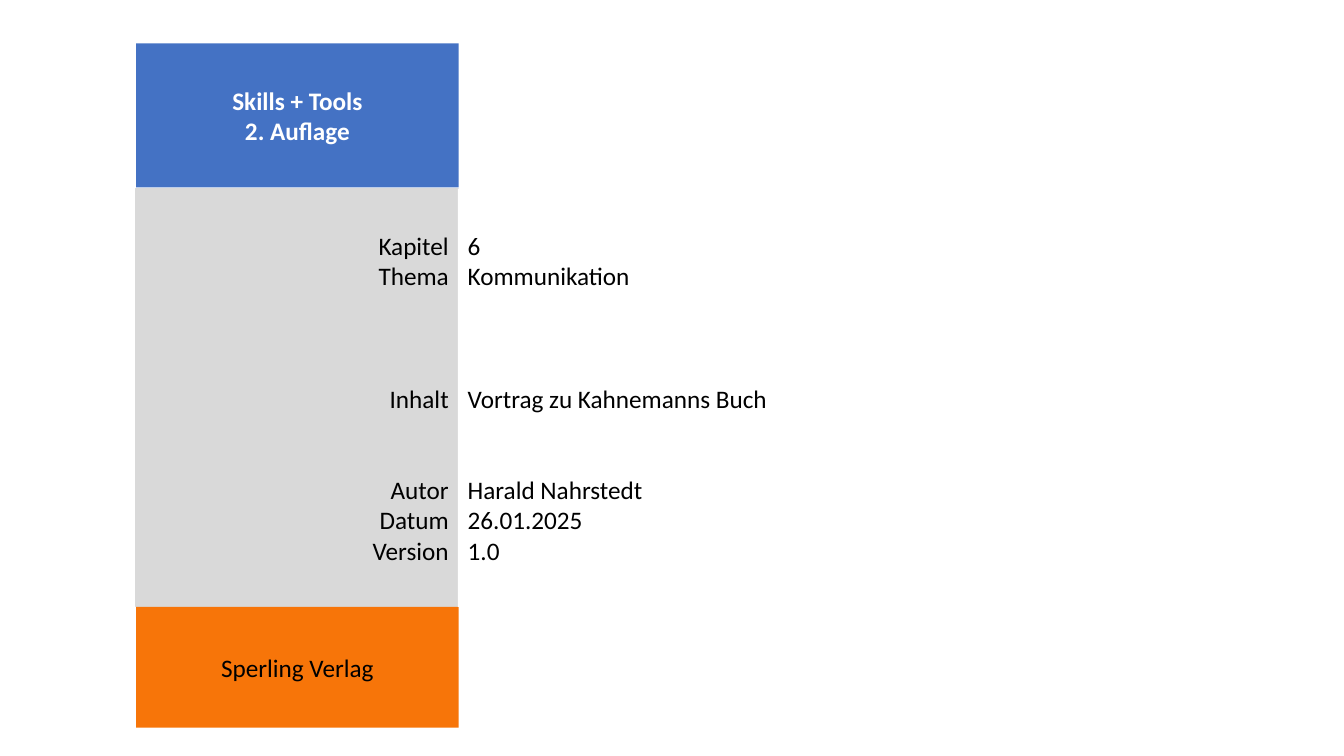
from pptx import Presentation
from pptx.dml.color import RGBColor
from pptx.enum.shapes import MSO_SHAPE
from pptx.enum.text import MSO_ANCHOR, PP_ALIGN
from pptx.util import Inches, Pt

BLUE = RGBColor(0x44, 0x72, 0xC4)
GREY = RGBColor(0xD9, 0xD9, 0xD9)
ORANGE = RGBColor(0xF7, 0x75, 0x09)
WHITE = RGBColor(0xFF, 0xFF, 0xFF)
BLACK = RGBColor(0x00, 0x00, 0x00)

LEFT, COLUMN_WIDTH = 1.35, 3.2
DETAILS_TOP, DETAILS_HEIGHT = 1.87, 4.15
LINE_HEIGHT = 21.97  # points, one line of 18 pt text

# Label, value and the number of lines left free above
DETAILS = [
    ("Kapitel", "6", 0),
    ("Thema", "Kommunikation", 0),
    ("Inhalt", "Vortrag zu Kahnemanns Buch", 3),
    ("Autor", "Harald Nahrstedt", 2),
    ("Datum", "26.01.2025", 0),
    ("Version", "1.0", 0),
]


class CoverSlide:
    """Holds the text style and the current slide."""

    font_name = "Calibri"
    font_size = Pt(18)

    def __init__(self, deck):
        self.page = deck.slides.add_slide(deck.slide_layouts[6])

    def block(self, left, top, width, height, fill, lines, align,
              color=BLACK, bold=False, outline=None):
        """Add a filled rectangle; lines are (text, free lines above)."""
        box = self.page.shapes.add_shape(
            MSO_SHAPE.RECTANGLE,
            Inches(left), Inches(top), Inches(width), Inches(height))
        box.shadow.inherit = False
        box.fill.solid()
        box.fill.fore_color.rgb = fill
        if outline is None:
            box.line.fill.background()
        else:
            box.line.color.rgb = outline
            box.line.width = Pt(1)

        frame = box.text_frame
        frame.word_wrap = True
        frame.vertical_anchor = MSO_ANCHOR.MIDDLE
        for index, (text, free_lines) in enumerate(lines):
            para = frame.add_paragraph() if index else frame.paragraphs[0]
            para.text = text
            para.alignment = align
            para.space_before = Pt(free_lines * LINE_HEIGHT)
            para.font.name = self.font_name
            para.font.size = self.font_size
            para.font.bold = bold
            para.font.color.rgb = color


def main():
    deck = Presentation()
    deck.slide_width, deck.slide_height = Inches(13.33), Inches(7.5)
    cover = CoverSlide(deck)

    # Title
    cover.block(LEFT, 0.43, COLUMN_WIDTH, 1.43, BLUE,
                [("Skills + Tools", 0), ("2. Auflage", 0)],
                PP_ALIGN.CENTER, color=WHITE, bold=True)

    # Labels
    cover.block(LEFT, DETAILS_TOP, COLUMN_WIDTH, DETAILS_HEIGHT, GREY,
                [(label, free) for label, _, free in DETAILS],
                PP_ALIGN.RIGHT, outline=GREY)

    # Publisher
    cover.block(LEFT, DETAILS_TOP + DETAILS_HEIGHT, COLUMN_WIDTH, 1.2, ORANGE,
                [("Sperling Verlag", 0)], PP_ALIGN.CENTER)

    # Values
    cover.block(4.54, DETAILS_TOP, 4.25, DETAILS_HEIGHT, WHITE,
                [(value, free) for _, value, free in DETAILS],
                PP_ALIGN.LEFT)

    deck.save("out.pptx")


if __name__ == "__main__":
    main()
